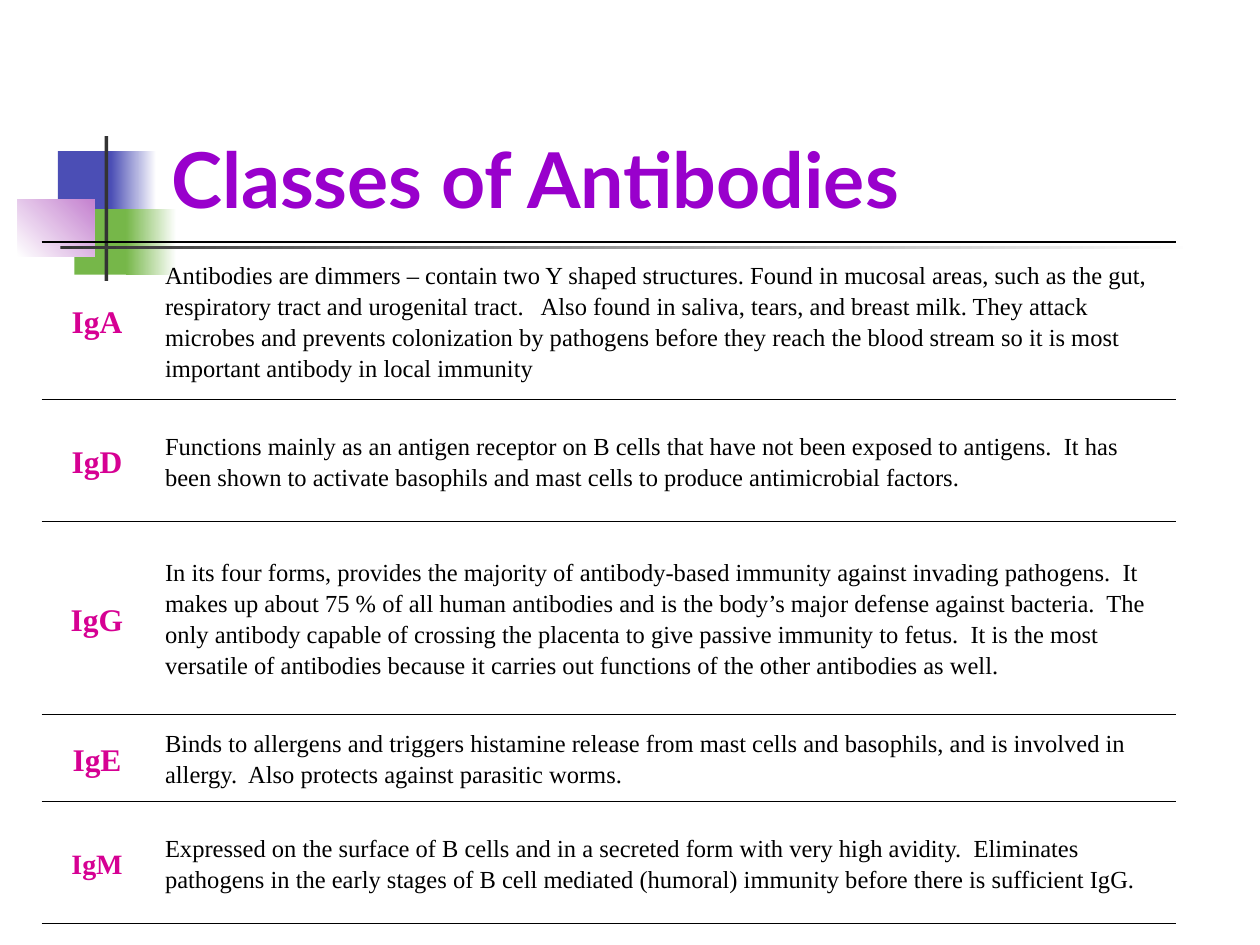
from dataclasses import dataclass

from lxml import etree
from pptx import Presentation
from pptx.dml.color import RGBColor
from pptx.enum import shapes, text
from pptx.oxml import ns
from pptx.util import Inches, Pt


@dataclass(frozen=True)
class Theme:
    blue: str = "4B4EB5"
    green: str = "76B749"
    violet: str = "C481CF"
    gray: str = "333333"
    white: str = "FFFFFF"
    black: str = "000000"
    title: str = "9900CC"
    label: str = "D60093"
    title_font: str = "Lato"
    body_font: str = "Times New Roman"
    title_size: int = 44
    label_size: int = 18
    small_label_size: int = 16
    body_size: int = 14
    line_spacing: float = 1.15
    rule_width: int = 1


THEME = Theme()
NO_TABLE_STYLE = "{2D5ABB26-0587-4C30-8999-92F81FD0307C}"

# Class, label size, row height, description
ANTIBODIES = [
    ("IgA", THEME.label_size, 1.25,
     "Antibodies are dimmers – contain two Y shaped structures. Found in mucosal areas, "
     "such as the gut, respiratory tract and urogenital tract.   Also found in saliva, "
     "tears, and breast milk. They attack microbes and prevents colonization by pathogens "
     "before they reach the blood stream so it is most important antibody in local immunity"),
    ("IgD", THEME.label_size, 0.97,
     "Functions mainly as an antigen receptor on B cells that have not been exposed to "
     "antigens.  It has been shown to activate basophils and mast cells to produce "
     "antimicrobial factors."),
    ("IgG", THEME.label_size, 1.53,
     "In its four forms, provides the majority of antibody-based immunity against invading "
     "pathogens.  It makes up about 75 % of all human antibodies and is the body’s major "
     "defense against bacteria.  The only antibody capable of crossing the placenta to give "
     "passive immunity to fetus.  It is the most versatile of antibodies because it carries "
     "out functions of the other antibodies as well."),
    ("IgE", THEME.label_size, 0.69,
     "Binds to allergens and triggers histamine release from mast cells and basophils, and "
     "is involved in allergy.  Also protects against parasitic worms."),
    ("IgM", THEME.small_label_size, 0.97,
     "Expressed on the surface of B cells and in a secreted form with very high avidity.  "
     "Eliminates pathogens in the early stages of B cell mediated (humoral) immunity before "
     "there is sufficient IgG."),
]


def rgb(color):
    return RGBColor.from_string(color)


def add_block(s, left, top, width, height, start, end=None, angle=0):
    """Add a borderless rectangle, fading from start to end if end is given."""
    sp = s.shapes.add_shape(shapes.MSO_SHAPE.RECTANGLE, Inches(left), Inches(top),
                            Inches(width), Inches(height))
    sp.shadow.inherit = False
    sp.line.fill.background()
    if end is None:
        sp.fill.solid()
        sp.fill.fore_color.rgb = rgb(start)
        return
    sp.fill.gradient()
    sp.fill.gradient_angle = angle
    for stop, color in zip(sp.fill.gradient_stops, (start, end)):
        stop.color.rgb = rgb(color)


def add_ornament(s, left, top):
    """Overlapping squares with a cross of one upright bar and one fading rule."""
    t = THEME
    blocks = [
        (0.32, 0.12, 0.48, 0.52, t.blue),
        (0.74, 0.12, 0.36, 0.52, t.blue, t.white),
        (0.45, 0.58, 0.46, 0.52, t.green),
        (0.86, 0.58, 0.40, 0.52, t.green, t.white),
        (0, 0.5, 0.61, 0.46, t.white, t.violet, 45),
        (0.69, 0, 0.03, 1.15, t.gray),
        (0.34, 0.87, 9, 0.03, t.gray, t.white),
    ]
    for dx, dy, *rest in blocks:
        add_block(s, left + dx, top + dy, *rest)


def style_paragraph(p, font, size, color, bold):
    p.font.name = font
    p.font.size = Pt(size)
    p.font.color.rgb = rgb(color)
    p.font.bold = bold


def add_title(s, left, top, width, height):
    tf = s.shapes.add_textbox(Inches(left), Inches(top), Inches(width),
                              Inches(height)).text_frame
    tf.word_wrap = True
    tf.vertical_anchor = text.MSO_ANCHOR.BOTTOM
    p = tf.paragraphs[0]
    p.text = "Classes of Antibodies"
    style_paragraph(p, THEME.title_font, THEME.title_size, THEME.title, True)


def set_rules(cell):
    """Draw the top and bottom borders of a cell."""
    tc_pr = cell._tc.get_or_add_tcPr()
    for i, side in enumerate(("a:lnT", "a:lnB")):
        ln = etree.Element(ns.qn(side), w=str(Pt(THEME.rule_width)))
        fill = etree.SubElement(ln, ns.qn("a:solidFill"))
        etree.SubElement(fill, ns.qn("a:srgbClr"), val=THEME.black)
        tc_pr.insert(i, ln)


def fill_cell(cell, words, size, color, bold):
    cell.fill.background()
    cell.vertical_anchor = text.MSO_ANCHOR.MIDDLE
    p = cell.text_frame.paragraphs[0]
    p.text = words
    p.line_spacing = THEME.line_spacing
    style_paragraph(p, THEME.body_font, size, color, bold)
    set_rules(cell)
    return p


def add_antibody_table(s, left, top, width, label_width):
    height = sum(row[2] for row in ANTIBODIES)
    table = s.shapes.add_table(len(ANTIBODIES), 2, Inches(left), Inches(top),
                               Inches(width), Inches(height)).table
    table.first_row = table.horz_banding = False
    table._tbl.tblPr.find(ns.qn("a:tableStyleId")).text = NO_TABLE_STYLE
    table.columns[0].width = Inches(label_width)
    table.columns[1].width = Inches(width - label_width)
    for i, (name, size, row_height, description) in enumerate(ANTIBODIES):
        table.rows[i].height = Inches(row_height)
        p = fill_cell(table.cell(i, 0), name, size, THEME.label, True)
        p.alignment = text.PP_ALIGN.CENTER
        p_pr = p._p.get_or_add_pPr()
        p_pr.set("marL", str(Inches(0.38)))
        p_pr.set("indent", str(Inches(-0.38)))
        fill_cell(table.cell(i, 1), description, THEME.body_size, THEME.black, False)


def main():
    prs = Presentation()
    prs.slide_width, prs.slide_height = Inches(10), Inches(7.5)
    s = prs.slides.add_slide(prs.slide_layouts[6])
    add_ornament(s, 0.14, 1.08)
    add_title(s, 1.26, 0.23, 8.52, 1.6)
    add_antibody_table(s, 0.33, 1.92, 9, 0.88)
    prs.save("out.pptx")


if __name__ == "__main__":
    main()
